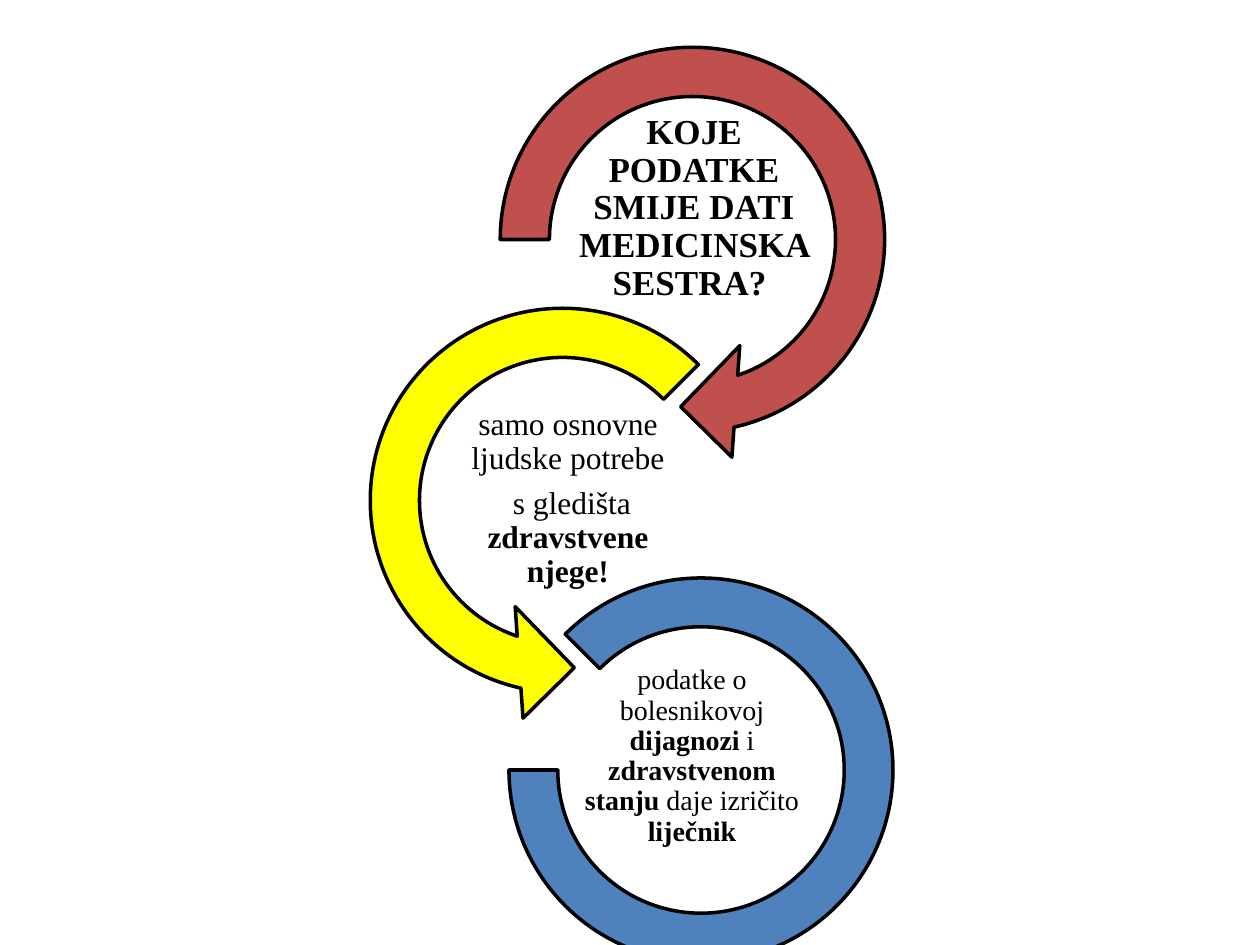
"""Build a slide of three linked circular arrows with text inside each."""
import pptx
import pptx.dml.color
import pptx.enum.shapes
import pptx.enum.text
import pptx.util

SCALE = 914400 / 126
FONT = "Times New Roman"
MSO = pptx.enum.shapes.MSO_SHAPE


def px(n):
    return pptx.util.Emu(round(n * SCALE))


def rgb(code):
    return pptx.dml.color.RGBColor.from_string(code)


def add_ring(s, kind, x, y, size, fill, adjustments):
    sp = s.shapes.add_shape(kind, px(x), px(y), px(size), px(size))
    sp.shadow.inherit = False
    sp.fill.solid()
    sp.fill.fore_color.rgb = rgb(fill)
    sp.line.color.rgb = rgb("000000")
    sp.line.width = pptx.util.Pt(2)
    for i, value in enumerate(adjustments):
        sp.adjustments[i] = value


def add_label(s, x, y, size, paragraphs):
    tf = s.shapes.add_textbox(px(x), px(y), px(248), px(125)).text_frame
    tf.word_wrap = True
    tf.vertical_anchor = pptx.enum.text.MSO_ANCHOR.MIDDLE
    tf.margin_left = tf.margin_right = tf.margin_top = tf.margin_bottom = px(1)
    for i, runs in enumerate(paragraphs):
        p = tf.add_paragraph() if i else tf.paragraphs[0]
        p.alignment = pptx.enum.text.PP_ALIGN.CENTER
        p.line_spacing = 0.9
        p.space_after = pptx.util.Pt(round(size * 0.35, 1))
        p.font.name = FONT
        p.font.size = pptx.util.Pt(size)
        p.font.color.rgb = rgb("000000")
        for text, bold in runs:
            r = p.add_run()
            r.text = text
            r.font.bold = bold


def main():
    prs = pptx.Presentation()
    prs.slide_width, prs.slide_height = px(1260), px(945)
    s = prs.slides.add_slide(prs.slide_layouts[6])

    add_ring(s, MSO.CIRCULAR_ARROW, 469, 16, 447, "C0504D",
             (0.11, 11.42, 45, 108, 0.125))
    add_label(s, 570, 146, 20, [
        [("KOJE PODATKE SMIJE DATI MEDICINSKA SESTRA? ", True)],
    ])
    add_ring(s, MSO.LEFT_CIRCULAR_ARROW, 339, 277, 447, "FFFF00",
             (0.11, 11.42, 63, 189, 0.125))
    add_label(s, 444, 436, 18, [
        [("samo osnovne ljudske potrebe", False)],
        [(" s gledišta ", False), ("zdravstvene njege!", True)],
    ])
    add_ring(s, MSO.BLOCK_ARC, 509, 578, 384, "4F81BD", (135, 108, 0.127))
    add_label(s, 568, 694, 16, [
        [("podatke o bolesnikovoj ", False), ("dijagnozi", True),
         (" i ", False), ("zdravstvenom stanju ", True),
         ("daje izričito ", False), ("liječnik", True)],
    ])
    prs.save("out.pptx")


if __name__ == "__main__":
    main()
